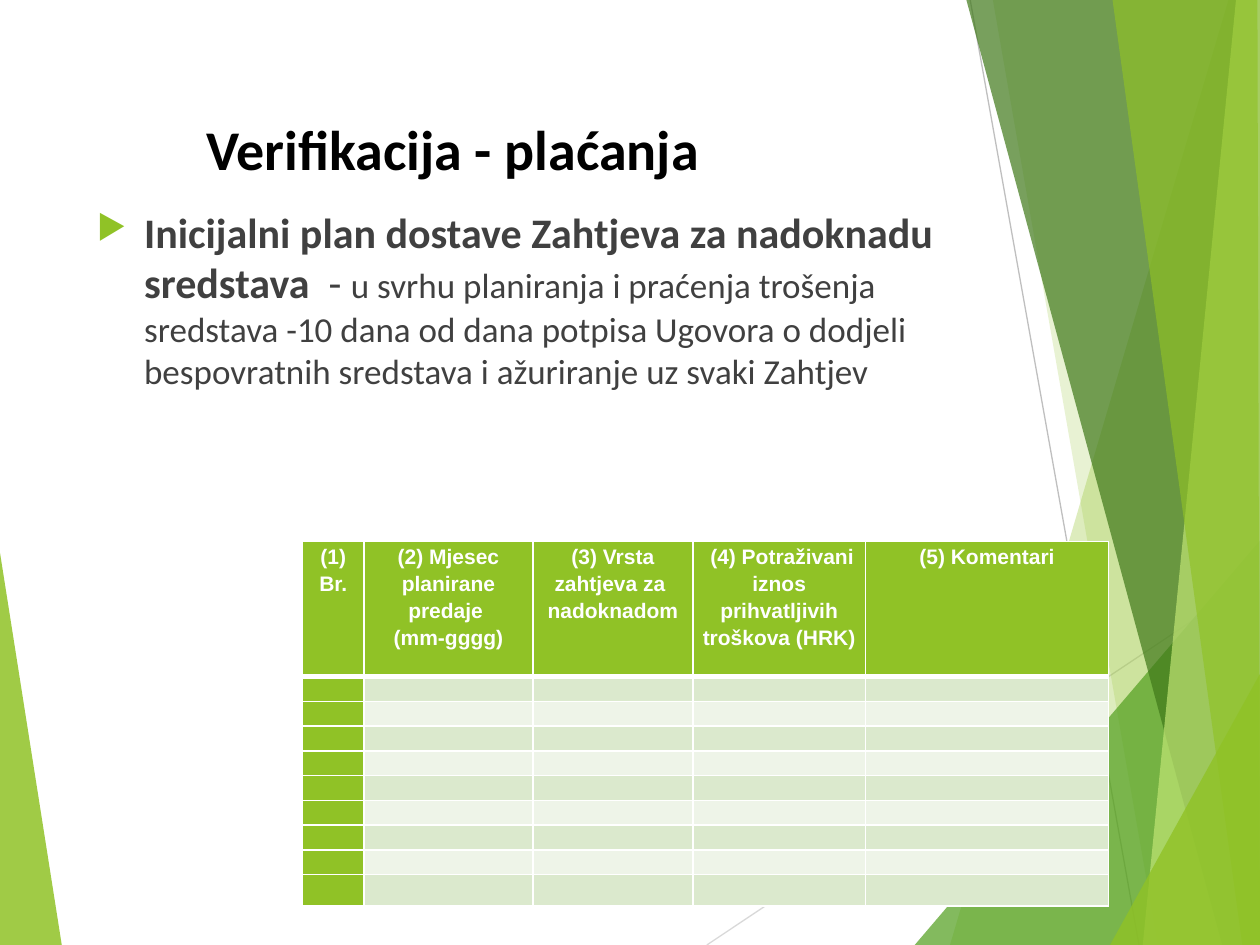
"""Build a slide on payment verification with a table for planned reimbursement claims."""
import pptx
import pptx.dml.color
import pptx.enum.shapes
import pptx.enum.text
import pptx.oxml
import pptx.oxml.ns
import pptx.util
import lxml.etree

qn = pptx.oxml.ns.qn
COLORS = {
    "lime": "90C226", "green": "54A021", "forest": "3F7819", "pale": "C0E474",
    "silver": "D9D9D9", "gray": "BFBFBF", "text": "404040", "black": "000000",
    "white": "FFFFFF", "band": "DBE9CD", "light": "EEF4E8",
}
RGB = {name: pptx.dml.color.RGBColor.from_string(value) for name, value in COLORS.items()}

deck = pptx.Presentation()
deck.slide_width = pptx.util.Inches(10)
deck.slide_height = pptx.util.Inches(7.5)
page = deck.slides.add_slide(deck.slide_layouts[6])


def across(percent):
    return round(deck.slide_width * percent / 100)


def down(percent):
    return round(deck.slide_height * percent / 100)


rays = [
    ("silver", (56.1, 100), (100, 60.9)),
    ("gray", (77, 0), (90.4, 100)),
]
facets = [
    ("lime", 85, [(0, 58.5), (4.9, 100), (0, 100)]),
    ("lime", 30, [(97.5, 0), (75.4, 100), (100, 100), (100, 0)]),
    ("lime", 20, [(78.8, 0), (91.9, 100), (100, 100), (100, 0)]),
    ("green", 72, [(72.6, 100), (100, 57.2), (100, 100)]),
    ("forest", 70, [(76.7, 0), (97, 100), (100, 100), (100, 0)]),
    ("pale", 70, [(98.1, 0), (90.7, 100), (100, 100), (100, 0)]),
    ("lime", 65, [(88.3, 0), (98.6, 100), (100, 100), (99.8, 0)]),
    ("lime", 80, [(88.1, 100), (100, 71.3), (100, 100)]),
]

for color, start, end in rays:
    ray = page.shapes.add_connector(
        pptx.enum.shapes.MSO_CONNECTOR.STRAIGHT,
        across(start[0]), down(start[1]), across(end[0]), down(end[1]))
    ray.line.color.rgb = RGB[color]
    ray.line.width = pptx.util.Pt(0.75)
    lxml.etree.SubElement(ray._element.spPr, qn("a:effectLst"))

for color, opacity, corners in facets:
    points = [(across(x), down(y)) for x, y in corners]
    builder = page.shapes.build_freeform(*points[0])
    builder.add_line_segments(points[1:], close=True)
    facet = builder.convert_to_shape()
    facet.shadow.inherit = False
    facet.line.fill.background()
    facet.fill.solid()
    facet.fill.fore_color.rgb = RGB[color]
    tint = facet._element.spPr.find(qn("a:solidFill")).find(qn("a:srgbClr"))
    lxml.etree.SubElement(tint, qn("a:alpha"), val=str(opacity * 1000))

title = page.shapes.add_textbox(across(15.4), down(3.9), across(63.4), down(15.3))
title.text_frame.word_wrap = True
title.text_frame.vertical_anchor = pptx.enum.text.MSO_ANCHOR.BOTTOM
title.text_frame.margin_bottom = 0
body = page.shapes.add_textbox(across(6.7), down(21.2), across(72.1), down(76.1))
body.text_frame.word_wrap = True

bullet = body.text_frame.paragraphs[0]._p.get_or_add_pPr()
bullet.set("marL", str(across(3.75)))
bullet.set("indent", str(-across(3.75)))
bullet_color = lxml.etree.SubElement(bullet, qn("a:buClr"))
lxml.etree.SubElement(bullet_color, qn("a:srgbClr"), val=COLORS["lime"])
lxml.etree.SubElement(bullet, qn("a:buSzPct"), val="80000")
lxml.etree.SubElement(bullet, qn("a:buChar"), char="▶")

texts = [
    (title, "Verifikacija - plaćanja", 32, True, "black"),
    (body, "Inicijalni plan dostave Zahtjeva za nadoknadu sredstava ", 24, True, "text"),
    (body, " - ", 24, False, "text"),
    (body, "u svrhu planiranja i praćenja trošenja sredstava -10 dana od dana potpisa "
     "Ugovora o dodjeli bespovratnih sredstava i ažuriranje uz svaki Zahtjev", 20, False, "text"),
]
for box, words, size, bold, color in texts:
    span = box.text_frame.paragraphs[0].add_run()
    span.text = words
    span.font.name = "Calibri"
    span.font.size = pptx.util.Pt(size)
    span.font.bold = bold
    span.font.color.rgb = RGB[color]

headings = [
    ["(1)", "Br."],
    ["(2) Mjesec", "planirane predaje ", "(mm-gggg)"],
    ["(3) Vrsta", "zahtjeva za ", "nadoknadom"],
    [" (4) Potraživani", "iznos prihvatljivih troškova (HRK)"],
    ["(5) Komentari"],
]
column_shares = [4.9, 13.4, 12.7, 13.7, 19.3]
row_shares = [14.3] + [2.62] * 8 + [3.3]
table = page.shapes.add_table(
    len(row_shares), len(column_shares), across(24), down(57.3),
    across(sum(column_shares)), down(sum(row_shares))).table
for column, share in zip(table.columns, column_shares):
    column.width = across(share)

for row_index, share in enumerate(row_shares):
    table.rows[row_index].height = down(share)
    for column_index, lines in enumerate(headings):
        cell = table.cell(row_index, column_index)
        cell.margin_left = cell.margin_right = across(0.7)
        cell.margin_top = cell.margin_bottom = 0
        heavy_side = {0: "lnB", 1: "lnT"}.get(row_index)
        for side in ("lnL", "lnR", "lnT", "lnB"):
            width = pptx.util.Pt(3 if side == heavy_side else 1)
            border = lxml.etree.SubElement(
                cell._tc.get_or_add_tcPr(), qn(f"a:{side}"), w=str(width))
            border_fill = lxml.etree.SubElement(border, qn("a:solidFill"))
            lxml.etree.SubElement(border_fill, qn("a:srgbClr"), val=COLORS["white"])
        cell.fill.solid()
        band = "band" if row_index % 2 else "light"
        cell.fill.fore_color.rgb = RGB["lime" if row_index == 0 or column_index == 0 else band]
        if row_index:
            lxml.etree.SubElement(cell.text_frame.paragraphs[0]._p, qn("a:endParaRPr"), sz="800")
            continue
        for line_index, words in enumerate(lines):
            frame = cell.text_frame
            para = frame.add_paragraph() if line_index else frame.paragraphs[0]
            para.alignment = pptx.enum.text.PP_ALIGN.CENTER
            para.line_spacing = 1.15
            span = para.add_run()
            span.text = words
            span.font.name = "Arial"
            span.font.size = pptx.util.Pt(12)
            span.font.bold = True
            span.font.color.rgb = RGB["white"]

deck.save("out.pptx")
